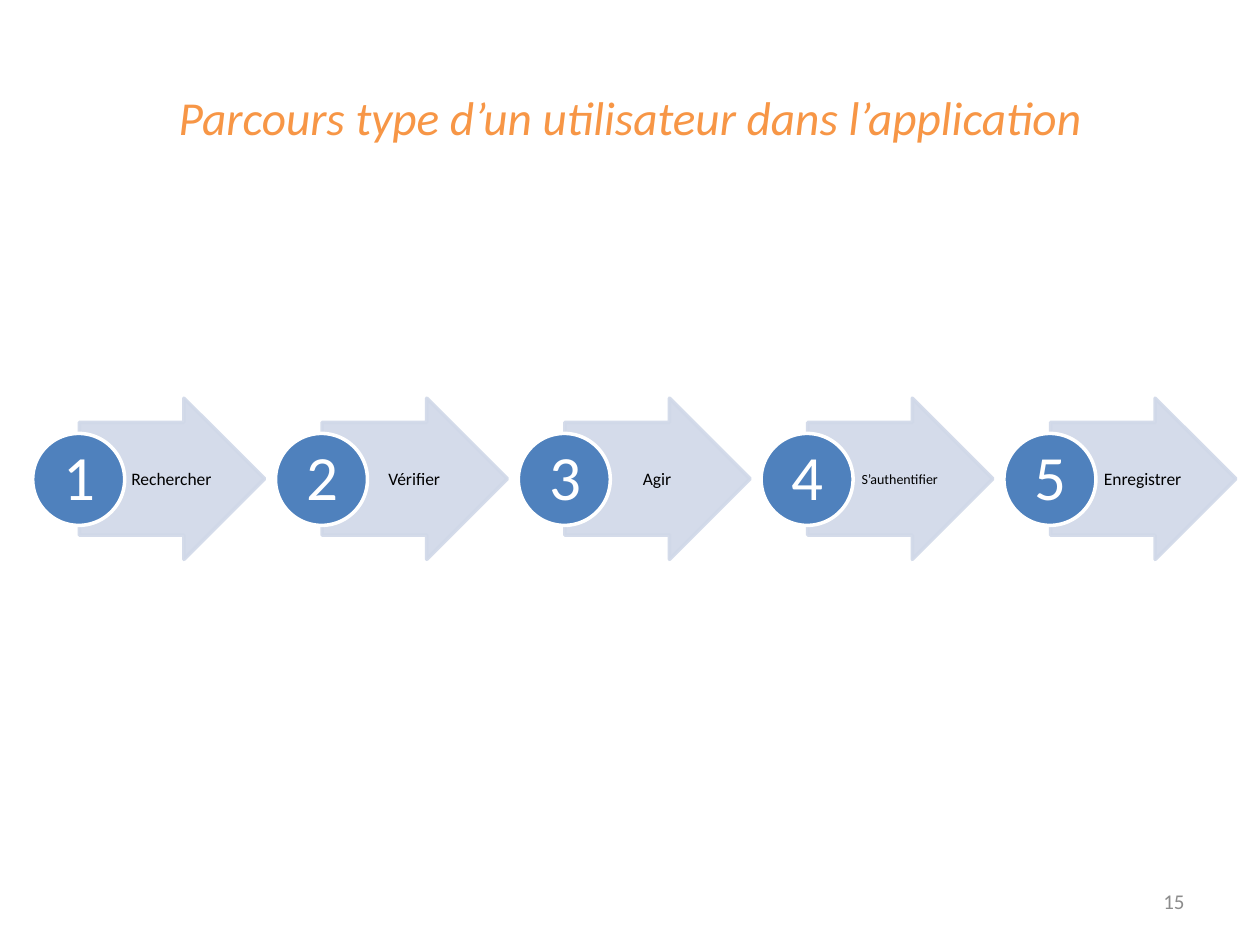
import pptx
import pptx.util
import pptx.dml.color
import pptx.enum.shapes
import pptx.enum.text
import pptx.oxml.ns
import lxml.etree

Inches = pptx.util.Inches
Pt = pptx.util.Pt
Shape = pptx.enum.shapes.MSO_SHAPE
Align = pptx.enum.text.PP_ALIGN

STEPS = [("Rechercher", 10), ("Vérifier", 10), ("Agir", 10),
         ("S’authentifier", 8), ("Enregistrer", 10)]
FIRST_LEFT = 0.26
STEP_PITCH = 1.927


def color(hex_code):
    return pptx.dml.color.RGBColor.from_string(hex_code)


class SlideBuilder:
    font = "Calibri"
    orange, gray, black, white = "F79646", "8C8C8C", "000000", "FFFFFF"
    blue, pale_blue = "4F81BD", "D0D8E8"

    def __init__(self, slide):
        self.slide = slide

    def text(self, shapes, at, words, size, hex_code, align=Align.CENTER,
             italic=False, insets=(0.1, 0.05, 0.1, 0.05), line_spacing=1.0):
        """Add a vertically centred text box; insets run left, top, right, bottom."""
        box = shapes.add_textbox(*map(Inches, at))
        frame = box.text_frame
        frame.word_wrap = True
        frame.vertical_anchor = pptx.enum.text.MSO_ANCHOR.MIDDLE
        (frame.margin_left, frame.margin_top,
         frame.margin_right, frame.margin_bottom) = map(Inches, insets)
        para = frame.paragraphs[0]
        para.alignment = align
        para.line_spacing = line_spacing
        span = para.add_run()
        span.text = words
        span.font.name = self.font
        span.font.size = Pt(size)
        span.font.italic = italic
        span.font.color.rgb = color(hex_code)

    def shape(self, shapes, kind, at, fill, line):
        shape = shapes.add_shape(kind, *map(Inches, at))
        shape.shadow.inherit = False
        shape.fill.solid()
        shape.fill.fore_color.rgb = color(fill)
        shape.line.color.rgb = color(line)
        shape.line.width = Pt(2)
        return shape

    def arrow(self, shapes, at):
        """Add a slightly transparent arrow with rounded corners."""
        arrow = self.shape(shapes, Shape.RIGHT_ARROW, at, self.pale_blue, self.pale_blue)
        arrow.adjustments[0] = 0.7
        arrow.adjustments[1] = 0.5
        qn = pptx.oxml.ns.qn
        properties = arrow._element.spPr
        for rgb in properties.iter(qn("a:srgbClr")):
            lxml.etree.SubElement(rgb, qn("a:alpha"), val="90000")
        lxml.etree.SubElement(properties.find(qn("a:ln")), qn("a:round"))

    def step(self, shapes, left, number, label, size):
        """Add one numbered arrow whose circle starts at left."""
        self.arrow(shapes, (left + 0.37, 3.16, 1.47, 1.28))
        self.text(shapes, (left + 0.73, 3.36, 0.72, 0.9), label, size, self.black,
                  insets=(0.03, 0.01, 0.01, 0.01), line_spacing=0.9)
        self.shape(shapes, Shape.OVAL, (left, 3.44, 0.73, 0.73), self.blue, self.white)
        self.text(shapes, (left + 0.11, 3.55, 0.52, 0.52), str(number), 36, self.white,
                  insets=(0.03,) * 4, line_spacing=0.9)


def main():
    deck = pptx.Presentation()
    deck.slide_width, deck.slide_height = Inches(10), Inches(7.5)
    page = SlideBuilder(deck.slides.add_slide(deck.slide_layouts[6]))
    shapes = page.slide.shapes

    page.text(shapes, (0.5, 0.3, 9, 1.25),
              "Parcours type d’un utilisateur dans l’application",
              27, page.orange, italic=True)
    page.text(shapes, (7.17, 6.95, 2.33, 0.4), "15", 12, page.gray, Align.RIGHT)

    process = shapes.add_group_shape()
    for index, (label, size) in enumerate(STEPS):
        page.step(process.shapes, FIRST_LEFT + index * STEP_PITCH, index + 1, label, size)

    deck.save("out.pptx")


if __name__ == "__main__":
    main()
